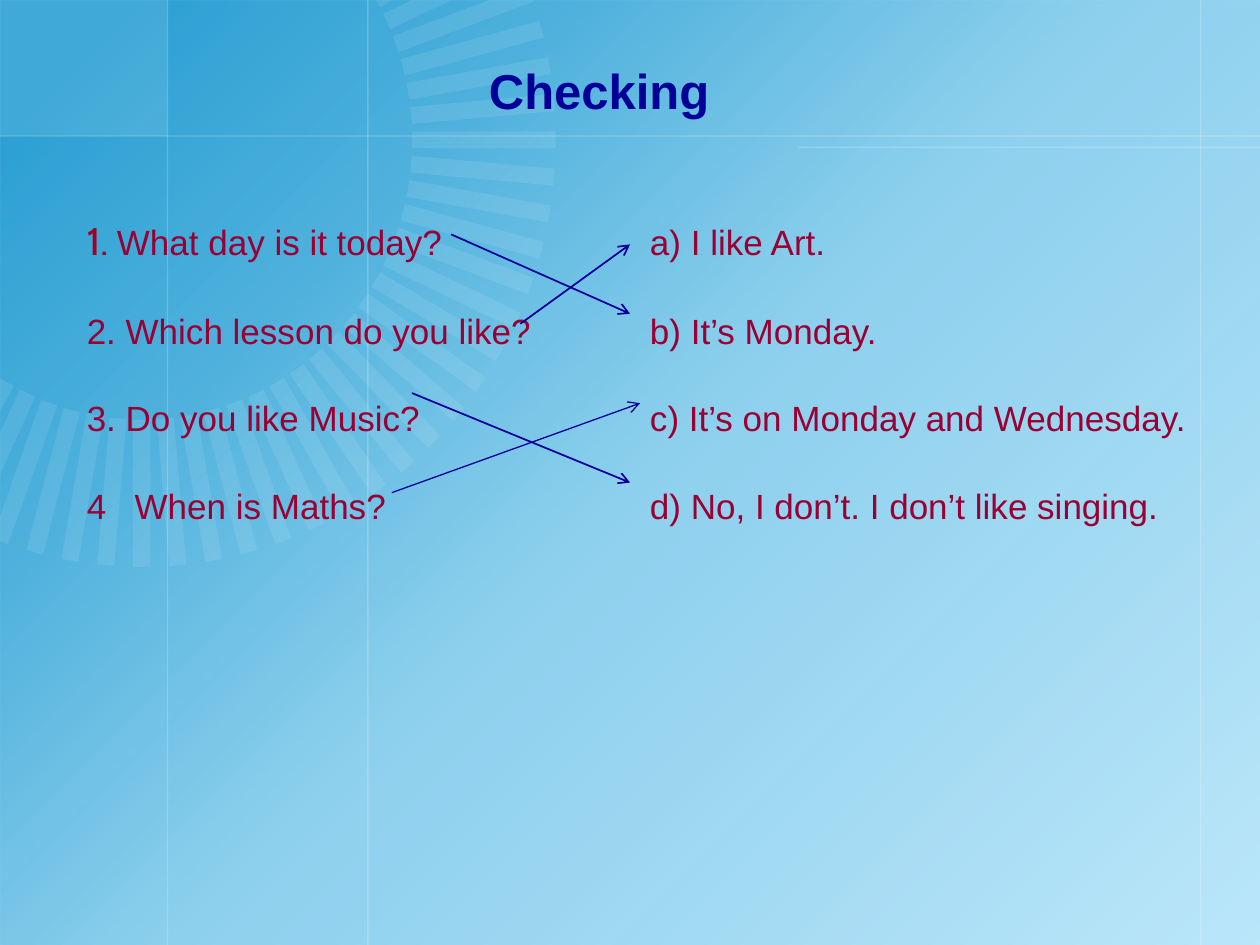
import math

import lxml.etree
import pptx
import pptx.dml.color
import pptx.enum.shapes
import pptx.enum.text
import pptx.oxml
import pptx.oxml.ns
import pptx.util

Inches, Pt = pptx.util.Inches, pptx.util.Pt
qn = pptx.oxml.ns.qn
COLORS = {"sky": "BCE7FA", "deep": "0F92CC", "white": "FFFFFF", "ray": "F2FAFE",
          "navy": "000099", "red": "A50021", "wine": "990033"}


def rgb(name):
    return pptx.dml.color.RGBColor.from_string(COLORS[name])


def add_element(parent, tag, **attrs):
    return lxml.etree.SubElement(parent, qn(tag), {k: str(v) for k, v in attrs.items()})


def set_color(fill, name, opacity=100):
    fill.solid()
    fill.fore_color.rgb = rgb(name)
    if opacity < 100:
        color = fill._xPr.find(qn("a:solidFill"))[0]
        add_element(color, "a:alpha", val=opacity * 1000)


def clip(points, axis):
    """Keep the part of a polygon whose coordinate on the axis is not negative."""
    kept = []
    for a, b in zip(points, points[1:] + points[:1]):
        if a[axis] >= 0:
            kept.append(a)
        if (a[axis] >= 0) != (b[axis] >= 0):
            t = a[axis] / (a[axis] - b[axis])
            kept.append(tuple(u + t * (v - u) for u, v in zip(a, b)))
    return kept


class SlideBuilder:
    def __init__(self, prs, font="Arial"):
        self.font = font
        self.slide = prs.slides.add_slide(prs.slide_layouts[6])
        set_color(self.slide.background.fill, "sky")

    def finish(self, sp, color, opacity):
        set_color(sp.fill, color, opacity)
        sp.line.fill.background()
        sp.shadow.inherit = False
        return sp

    def rect(self, x, y, w, h, color, opacity=100):
        sp = self.slide.shapes.add_shape(
            pptx.enum.shapes.MSO_SHAPE.RECTANGLE, *map(Inches, (x, y, w, h)))
        return self.finish(sp, color, opacity)

    def gradient_rect(self, x, y, w, h, color, stops, angle):
        """Stops are pairs of position and opacity, both in percent."""
        sp = self.rect(x, y, w, h, color)
        solid = sp._element.spPr.find(qn("a:solidFill"))
        grad = lxml.etree.Element(qn("a:gradFill"), rotWithShape="1")
        stop_list = add_element(grad, "a:gsLst")
        for position, opacity in stops:
            stop = add_element(stop_list, "a:gs", pos=position * 1000)
            clr = add_element(stop, "a:srgbClr", val=COLORS[color])
            add_element(clr, "a:alpha", val=opacity * 1000)
        add_element(grad, "a:lin", ang=angle * 60000, scaled=0)
        solid.getparent().replace(solid, grad)

    def polygon(self, points, color, opacity):
        points = [(Inches(x), Inches(y)) for x, y in points]
        builder = self.slide.shapes.build_freeform(*points[0])
        builder.add_line_segments(points[1:], close=True)
        self.finish(builder.convert_to_shape(), color, opacity)

    def line(self, start, end, color, width=0.75, opacity=100, arrow=False):
        cx = self.slide.shapes.add_connector(
            pptx.enum.shapes.MSO_CONNECTOR.STRAIGHT, *map(Inches, start + end))
        set_color(cx.line.fill, color, opacity)
        cx.line.width = Pt(width)
        if arrow:
            add_element(cx.line._get_or_add_ln(), "a:tailEnd", type="arrow")
        add_element(cx._element.spPr, "a:effectLst")

    def text_frame(self, x, y, w, h, anchor="TOP"):
        tf = self.slide.shapes.add_textbox(*map(Inches, (x, y, w, h))).text_frame
        tf.word_wrap = True
        tf.vertical_anchor = pptx.enum.text.MSO_ANCHOR[anchor]
        return tf

    def style(self, font, size, color, bold=False, name=None):
        font.name, font.size, font.bold = name or self.font, Pt(size), bold
        font.color.rgb = rgb(color)

    def title(self, text, x, y, w, h):
        p = self.text_frame(x, y, w, h, "MIDDLE").paragraphs[0]
        p.text = text
        p.alignment = pptx.enum.text.PP_ALIGN.CENTER
        self.style(p.font, 28, "navy", bold=True)

    def matching_list(self, rows, x, y, w, h, tabs):
        """Each row holds a number, a question and an answer set at the last tab."""
        tf = self.text_frame(x, y, w, h)
        for i, (number, question, answer) in enumerate(rows):
            p = tf.paragraphs[0] if i == 0 else tf.add_paragraph()
            p.line_spacing = 2.0
            p.space_before = Pt(2 if i else 0)
            tab_list = add_element(p._p.get_or_add_pPr(), "a:tabLst")
            for tab in tabs:
                add_element(tab_list, "a:tab", pos=Inches(tab), algn="l")
            for text in (number, f"{question}\t{answer}"):
                r = p.add_run()
                r.text = text
                self.style(r.font, 20, "wine")
            if i == 0:
                self.style(p.runs[0].font, 22, "red", name="Cabin")


def draw_sunburst(page):
    """Rays every five degrees around one centre, cut at the slide's edges."""
    cx, cy, half_width = 1.125, 1.11, 0.0675
    inner, outer = (2.145, 2.22), (3.285, 3.39)
    for degrees in range(-30, 121, 5):
        cos, sin = math.cos(math.radians(degrees)), math.sin(math.radians(degrees))
        corners = [(cx + rx * cos - side * half_width * sin,
                    cy + ry * sin + side * half_width * cos)
                   for (rx, ry), side in ((inner, -1), (outer, -1), (outer, 1), (inner, 1))]
        page.polygon(clip(clip(corners, 0), 1), "ray", 10)


def main():
    prs = pptx.Presentation()
    prs.slide_width, prs.slide_height = Inches(10), Inches(7.5)
    page = SlideBuilder(prs)

    page.gradient_rect(0, 0, 10, 7.5, "deep", [(6, 83), (26, 63), (50, 27), (100, 0)], 45)
    page.rect(0, 0, 1.33, 1.08, "white", 10)
    for x in (1.33, 9.53, 2.92):
        page.line((x, 0), (x, 7.5), "white", opacity=20)
    for x, y in ((0, 1.08), (6.33, 1.17)):
        page.line((x, y), (10, y), "white", opacity=20)
    draw_sunburst(page)

    page.title("Checking", 0.67, 0.36, 8.17, 0.71)
    page.matching_list([
        ("1. ", "What day is it today?", "a) I like Art."),
        ("2. ", "Which lesson do you like?", "b) It’s Monday."),
        ("3. ", "Do you like Music?", "c) It’s on Monday and Wednesday."),
        ("4\t", "When is Maths?", "d) No, I don’t. I don’t like singing."),
    ], 0.59, 1.31, 9.22, 4.42, tabs=(0.38, 4.47))

    for start, end, width in (((3.58, 1.86), (5, 2.49), 1), ((4.13, 2.57), (5, 1.94), 1),
                              ((3.27, 3.12), (5, 3.83), 1), ((3.11, 3.91), (5.08, 3.2), 0.75)):
        page.line(start, end, "navy", width, arrow=True)
    prs.save("out.pptx")


if __name__ == "__main__":
    main()
